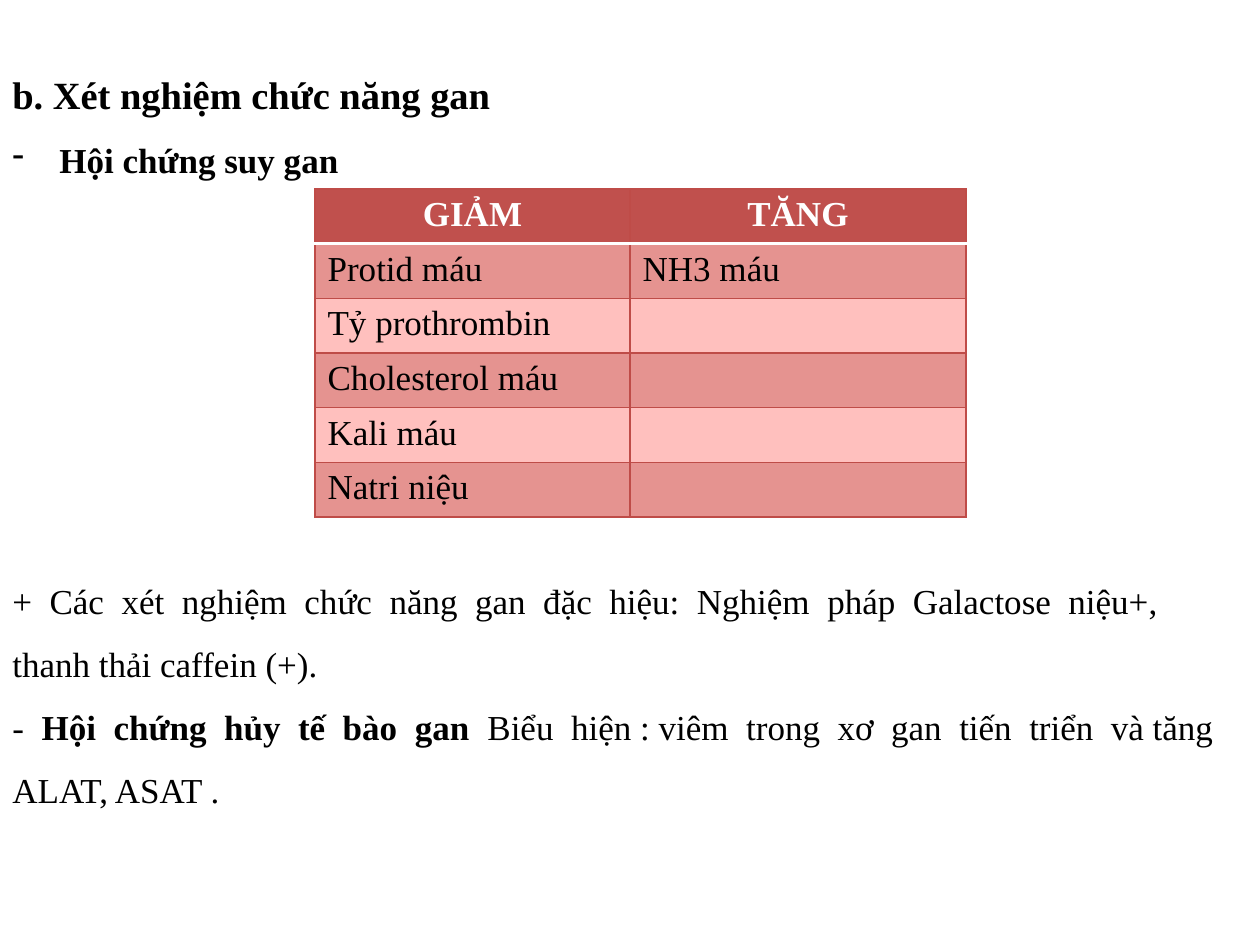
from lxml import etree
from pptx import Presentation
from pptx.dml.color import RGBColor
from pptx.enum.text import PP_ALIGN
from pptx.oxml.ns import qn
from pptx.util import Pt

PX = 914400 / 126
LEFT, CENTER = PP_ALIGN.LEFT, PP_ALIGN.CENTER
FONT = "Times New Roman"
BLACK, WHITE = "000000", "FFFFFF"
HEADER, DARK_BAND, LIGHT_BAND, GRID = "C0504D", "E59390", "FFC0BE", "BF4C48"


def px(n):
    return round(n * PX)


def write(paragraph, text, size=20, bold=False, color=BLACK, align=LEFT, spacing=1.0):
    paragraph.alignment = align
    paragraph.line_spacing = spacing
    run = paragraph.add_run()
    run.text = text
    run.font.name = FONT
    run.font.size = Pt(size)
    run.font.bold = bold
    run.font.color.rgb = RGBColor.from_string(color)


def border(cell, side, color, width):
    line = etree.SubElement(cell._tc.get_or_add_tcPr(), qn(f"a:ln{side}"), w=str(Pt(width)))
    fill = etree.SubElement(line, qn("a:solidFill"))
    etree.SubElement(fill, qn("a:srgbClr"), val=color)


prs = Presentation()
prs.slide_width, prs.slide_height = px(1260), px(945)
slide = prs.slides.add_slide(prs.slide_layouts[6])

# Body text, with room for the table after the second paragraph
body = slide.shapes.add_textbox(0, px(42), px(1260), px(782)).text_frame
body.word_wrap = True
heading = body.paragraphs[0]
write(heading, "b. Xét nghiệm chức năng gan", size=22, bold=True, spacing=1.5)

failure = body.add_paragraph()
properties = failure._p.get_or_add_pPr()
properties.set("marL", str(px(47)))
properties.set("indent", str(-px(47)))
etree.SubElement(properties, qn("a:buChar"), char="-")
write(failure, "Hội chứng suy gan", bold=True, spacing=1.5)

specific_tests = body.add_paragraph()
specific_tests.space_before = px(378)
write(specific_tests, "+  Các  xét  nghiệm  chức  năng  gan  đặc  hiệu:  Nghiệm  pháp  Galactose  niệu+,",
      spacing=1.5)
write(body.add_paragraph(), "thanh thải caffein (+).", spacing=1.5)

cell_damage = body.add_paragraph()
for text, bold in [
    ("-  ", False),
    ("Hội  chứng  hủy  tế  bào  gan  ", True),
    ("Biểu  hiện : viêm  trong  xơ  gan  tiến  triển  và tăng ALAT, ASAT .", False),
]:
    write(cell_damage, text, bold=bold, spacing=1.5)

# Table of decreased and increased values
rows = [
    ("GIẢM", "TĂNG"),
    ("Protid máu", "NH3 máu"),
    ("Tỷ prothrombin", ""),
    ("Cholesterol máu", ""),
    ("Kali máu", ""),
    ("Natri niệu", ""),
]
table = slide.shapes.add_table(len(rows), 2, px(315), px(189), px(651), px(324)).table
table.columns[0].width, table.columns[1].width = px(315), px(336)
for r, row in enumerate(rows):
    is_header = r == 0
    band = HEADER if is_header else DARK_BAND if r % 2 else LIGHT_BAND
    for c, text in enumerate(row):
        cell = table.cell(r, c)
        for side in "LRTB":
            under_header = (r, side) in [(0, "B"), (1, "T")]
            border(cell, side, WHITE if under_header else GRID, 2 if under_header else 0.75)
        cell.fill.solid()
        cell.fill.fore_color.rgb = RGBColor.from_string(band)
        if text:
            write(cell.text_frame.paragraphs[0], text, bold=is_header,
                  color=WHITE if is_header else BLACK, align=CENTER if is_header else LEFT)

prs.save("out.pptx")
